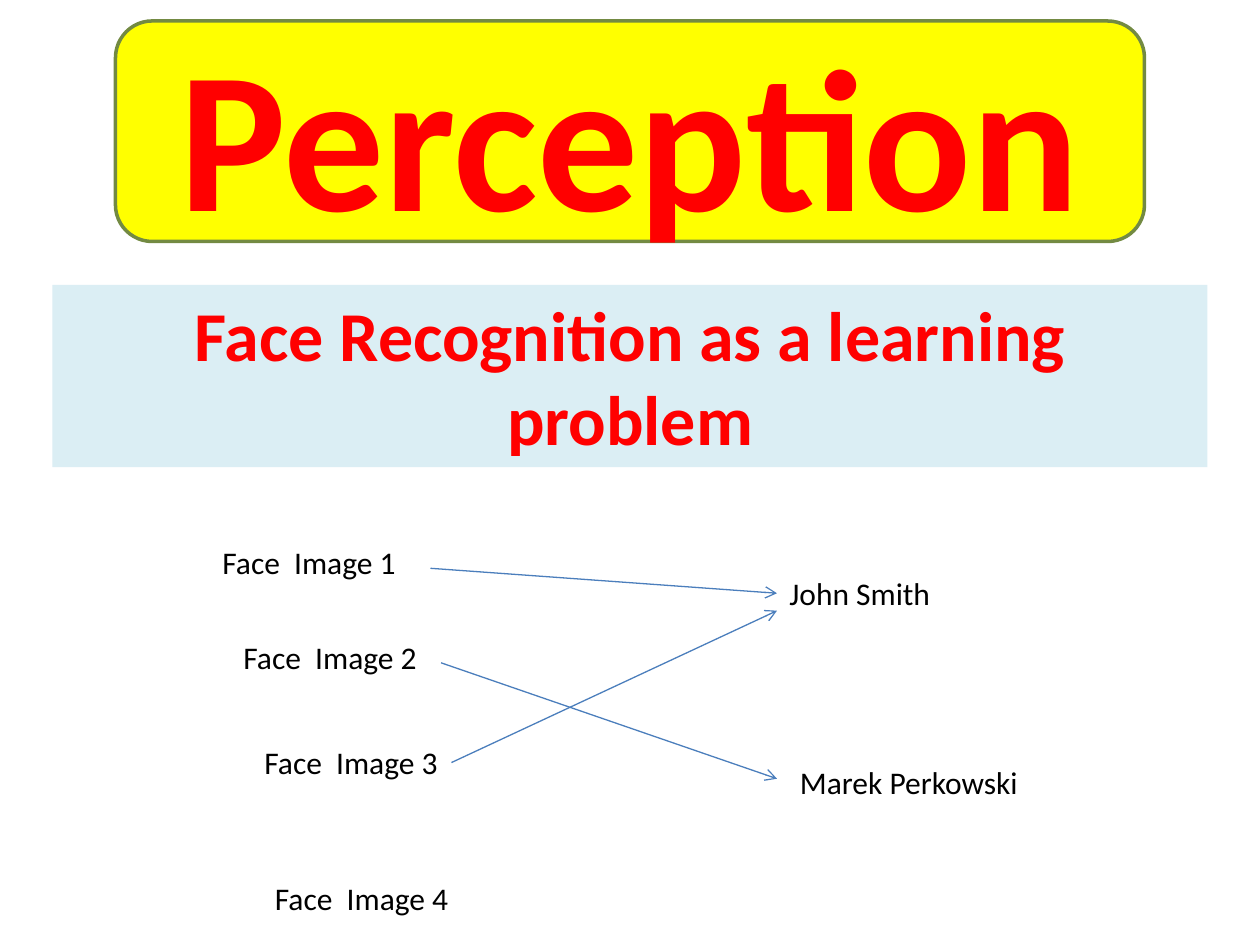
"""Build the slide on face recognition as a learning problem."""
import pptx
import pptx.dml.color
import pptx.enum.shapes
import pptx.enum.text
import pptx.oxml
import pptx.oxml.ns
import pptx.util

Pt = pptx.util.Pt
Kind = pptx.enum.shapes.MSO_SHAPE
Anchor = pptx.enum.text.MSO_ANCHOR
Align = pptx.enum.text.PP_ALIGN
Fit = pptx.enum.text.MSO_AUTO_SIZE

COLORS = {
    "black": "000000", "red": "FF0000", "yellow": "FFFF00",
    "olive": "738A42", "pale": "DBEEF4", "blue": "4B7EBC",
}
FONT = "Calibri"
TITLE = ("Face Recognition as a learning problem", (30, 162.75, 660, 104.25))
BANNER = ("Perception", (66, 12, 588, 126))
FACES = [(120, 306.5), (132, 361), (144, 421), (150, 499)]
NAMES = [("John Smith", 444, 324.5), ("Marek Perkowski", 450, 432.5)]
ARROWS = [
    (246, 324.75, 444, 339),
    (252, 378.75, 444, 445),
    (258, 435.75, 444, 349),
]


def color(name):
    return pptx.dml.color.RGBColor.from_string(COLORS[name])


def write(shape, text, size, hue, bold=False, align=Align.LEFT,
          anchor=Anchor.TOP, fit=Fit.SHAPE_TO_FIT_TEXT):
    frame = shape.text_frame
    frame.text = text
    frame.word_wrap = True
    frame.auto_size = fit
    frame.vertical_anchor = anchor
    para = frame.paragraphs[0]
    para.alignment = align
    font = para.runs[0].font
    font.name, font.size, font.bold = FONT, Pt(size), bold
    font.color.rgb = color(hue)


def paint(shape, hue):
    shape.fill.solid()
    shape.fill.fore_color.rgb = color(hue)


def label(slide, text, left, top, width):
    box = slide.shapes.add_textbox(Pt(left), Pt(top), Pt(width), Pt(29))
    write(box, text, 18, "black")


def arrow(slide, ends):
    link = slide.shapes.add_connector(
        pptx.enum.shapes.MSO_CONNECTOR.STRAIGHT, *map(Pt, ends))
    link.line.color.rgb = color("blue")
    link.line.width = Pt(0.75)
    tip = pptx.oxml.parse_xml(
        f'<a:tailEnd {pptx.oxml.ns.nsdecls("a")} type="arrow"/>')
    link.line._get_or_add_ln().append(tip)
    link._element.spPr.append(pptx.oxml.parse_xml(
        f'<a:effectLst {pptx.oxml.ns.nsdecls("a")}/>'))


def main():
    deck = pptx.Presentation()
    deck.slide_width, deck.slide_height = Pt(720), Pt(540)
    slide = deck.slides.add_slide(deck.slide_layouts[5])

    text, area = TITLE
    title = slide.shapes.title
    title.left, title.top, title.width, title.height = map(Pt, area)
    paint(title, "pale")
    write(title, text, 40, "red", True, Align.CENTER)

    for num, (left, top) in enumerate(FACES, 1):
        label(slide, f"Face  Image {num}", left, top, 114)
    for text, left, top in NAMES:
        label(slide, text, left, top, 162)
    for ends in ARROWS:
        arrow(slide, ends)

    text, area = BANNER
    banner = slide.shapes.add_shape(Kind.ROUNDED_RECTANGLE, *map(Pt, area))
    banner.shadow.inherit = False
    paint(banner, "yellow")
    banner.line.color.rgb = color("olive")
    banner.line.width = Pt(2)
    write(banner, text, 115, "red", True, Align.CENTER, Anchor.MIDDLE, Fit.NONE)

    deck.save("out.pptx")


if __name__ == "__main__":
    main()
